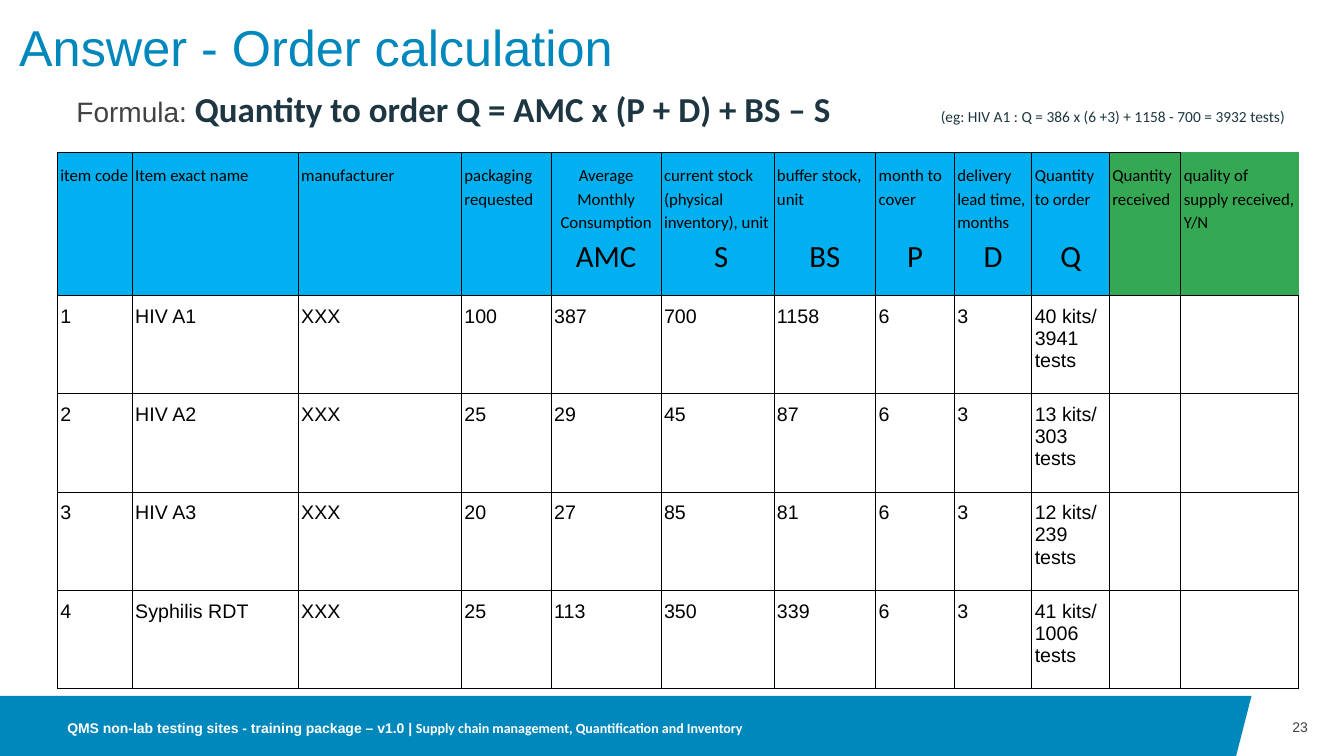
from dataclasses import dataclass

import pptx
import pptx.dml.color
import pptx.enum.text
import pptx.oxml
import pptx.oxml.ns
import pptx.util
from lxml import etree

Pt = pptx.util.Pt
Align = pptx.enum.text.PP_ALIGN
Anchor = pptx.enum.text.MSO_ANCHOR

BLUE, SKY, GREEN = "0087BC", "00B0F0", "34A853"
BLACK, WHITE, GRAY, NAVY = "000000", "FFFFFF", "424242", "1D3641"
LINE = 16.8  # height of one header text line
ROWS = [102.2, 70.2, 70.2, 70.2, 70.2]


@dataclass
class Head:
    label: str
    width: float
    mark: str = ""
    gap: float = 0
    indent: float = 0
    align: Align = Align.LEFT
    fill: str = SKY


HEADS = [
    Head("item code", 53.5),
    Head("Item exact name", 118.6),
    Head("manufacturer", 116.6),
    Head("packaging requested", 64.1),
    Head("Average Monthly Consumption", 78.5, "AMC", align=Align.CENTER),
    Head("current stock (physical inventory), unit", 80.7, "S", indent=5),
    Head("buffer stock, unit", 72.6, "BS", gap=LINE),
    Head("month to cover", 56.2, "P", gap=LINE),
    Head("delivery lead time, months", 55.4, "D"),
    Head("Quantity to order", 55.4, "Q", gap=LINE),
    Head("Quantity received", 51.1, fill=GREEN),
    Head("quality of supply received, Y/N", 84.2, fill=GREEN),
]

# Each order holds one tuple of paragraphs in its last entry
ITEMS = [
    ("HIV A1", 100, 387, 700, 1158, ("40 kits/ 3941 tests",)),
    ("HIV A2", 25, 29, 45, 87, ("13 kits/", "303 tests")),
    ("HIV A3", 20, 27, 85, 81, ("12 kits/ 239 tests",)),
    ("Syphilis RDT", 25, 113, 350, 339, ("41 kits/ 1006 tests",)),
]


def color(code: str) -> pptx.dml.color.RGBColor:
    return pptx.dml.color.RGBColor.from_string(code)


def add_run(para, text: str, size: float, font: str, code: str, bold: bool = False) -> None:
    run = para.add_run()
    run.text = text
    run.font.size = Pt(size)
    run.font.name = font
    run.font.bold = bold
    run.font.color.rgb = color(code)


def set_frame(frame, inset: bool, anchor: Anchor) -> None:
    frame.word_wrap = True
    frame.auto_size = pptx.enum.text.MSO_AUTO_SIZE.NONE
    frame.vertical_anchor = anchor
    frame.margin_left = frame.margin_right = Pt(7.2 if inset else 0)
    frame.margin_top = frame.margin_bottom = Pt(3.6 if inset else 0)


def add_box(slide, left: float, top: float, width: float, height: float,
            inset: bool = True, anchor: Anchor = Anchor.TOP):
    box = slide.shapes.add_textbox(Pt(left), Pt(top), Pt(width), Pt(height))
    set_frame(box.text_frame, inset, anchor)
    return box.text_frame.paragraphs[0]


def set_cell(cell, fill: str = "", sides: str = "LRTB"):
    """Format one cell and return its first paragraph."""
    cell.margin_left = cell.margin_right = Pt(2.1)
    cell.margin_top = cell.margin_bottom = Pt(7.2)
    props = cell._tc.get_or_add_tcPr()
    for side in "LRTB":
        edge = etree.SubElement(props, pptx.oxml.ns.qn(f"a:ln{side}"), w=str(Pt(0.75)))
        if side in sides:
            paint = etree.SubElement(edge, pptx.oxml.ns.qn("a:solidFill"))
            etree.SubElement(paint, pptx.oxml.ns.qn("a:srgbClr"), val=BLACK)
        else:
            etree.SubElement(edge, pptx.oxml.ns.qn("a:noFill"))
    if fill:
        cell.fill.solid()
        cell.fill.fore_color.rgb = color(fill)
    else:
        cell.fill.background()
    return cell.text_frame.paragraphs[0]


def fill_head(cell, head: Head, sides: str) -> None:
    para = set_cell(cell, head.fill, sides)
    para.line_spacing = 1.15
    para.alignment = head.align
    add_run(para, head.label, 12, "Calibri", BLACK)
    if head.mark:
        para = cell.text_frame.add_paragraph()
        para.line_spacing = 1.15
        para.alignment = Align.CENTER
        para.space_before = Pt(head.gap)
        para._p.get_or_add_pPr().set("marL", str(Pt(head.indent)))
        add_run(para, head.mark, 22, "Calibri", BLACK)


def add_orders(slide) -> None:
    frame = slide.shapes.add_table(len(ROWS), len(HEADS), Pt(41), Pt(108.9),
                                   Pt(sum(h.width for h in HEADS)), Pt(sum(ROWS)))
    table = frame.table
    table.first_row = table.horz_banding = False
    for row, height in zip(table.rows, ROWS):
        row.height = Pt(height)
    for col, head in enumerate(HEADS):
        table.columns[col].width = Pt(head.width)
        fill_head(table.cell(0, col), head, "LB" if head is HEADS[-1] else "LRTB")
    for num, (name, pack, use, stock, spare, order) in enumerate(ITEMS, 1):
        values = [num, name, "XXX", pack, use, stock, spare, 6, 3, order, (), ()]
        for col, value in enumerate(values):
            cell = table.cell(num, col)
            para = set_cell(cell)
            texts = value if isinstance(value, tuple) else (str(value),)
            for i, text in enumerate(texts):
                if i:
                    para = cell.text_frame.add_paragraph()
                add_run(para, text, 14, "Arial", BLACK)


def main() -> None:
    deck = pptx.Presentation()
    deck.slide_width, deck.slide_height = Pt(960), Pt(540)
    slide = deck.slides.add_slide(deck.slide_layouts[5])

    # Footer band
    path = slide.shapes.build_freeform(0, 496.8, scale=12700.0)
    path.add_line_segments([(894, 496.8), (883, 540), (0, 540)])
    band = path.convert_to_shape()
    band.shadow.inherit = False
    band.fill.solid()
    band.fill.fore_color.rgb = color(BLUE)
    band.line.fill.background()

    # Title
    title = slide.shapes.title
    title.left, title.top, title.width, title.height = Pt(13.7), Pt(13), Pt(828), Pt(45.4)
    set_frame(title.text_frame, False, Anchor.MIDDLE)
    para = title.text_frame.paragraphs[0]
    para.alignment = Align.LEFT
    para.line_spacing = 0.9
    add_run(para, "Answer - Order calculation", 36, "Arial", BLUE)

    # Formula, with the example set at a tab stop
    para = add_box(slide, 47.5, 58.3, 887, 48)
    para.space_before = Pt(10)
    stops = etree.SubElement(para._p.get_or_add_pPr(), pptx.oxml.ns.qn("a:tabLst"))
    etree.SubElement(stops, pptx.oxml.ns.qn("a:tab"), pos=str(Pt(617.4)), algn="l")
    add_run(para, "Formula: ", 20, "Arial", GRAY)
    add_run(para, "Quantity to order Q = AMC x (P + D) + BS – S", 25, "Calibri", NAVY, True)
    add_run(para, "\t", 26, "Calibri", NAVY, True)
    add_run(para, "(eg: HIV A1 : Q = 386 x (6 +3) + 1158 - 700 = 3932 tests)", 11, "Calibri", NAVY)

    # Order table
    add_orders(slide)

    # Footer text and page number
    para = add_box(slide, 41, 510.5, 549.4, 19.4)
    add_run(para, "QMS non-lab testing sites - training package – v1.0 | ", 10, "Arial", WHITE, True)
    add_run(para, "Supply chain management, Quantification and Inventory", 10, "Calibri", WHITE, True)
    para = add_box(slide, 894, 496.8, 40.3, 45.2, False, Anchor.MIDDLE)
    para.alignment = Align.RIGHT
    add_run(para, "23", 10, "Arial", GRAY)

    deck.save("out.pptx")


if __name__ == "__main__":
    main()
